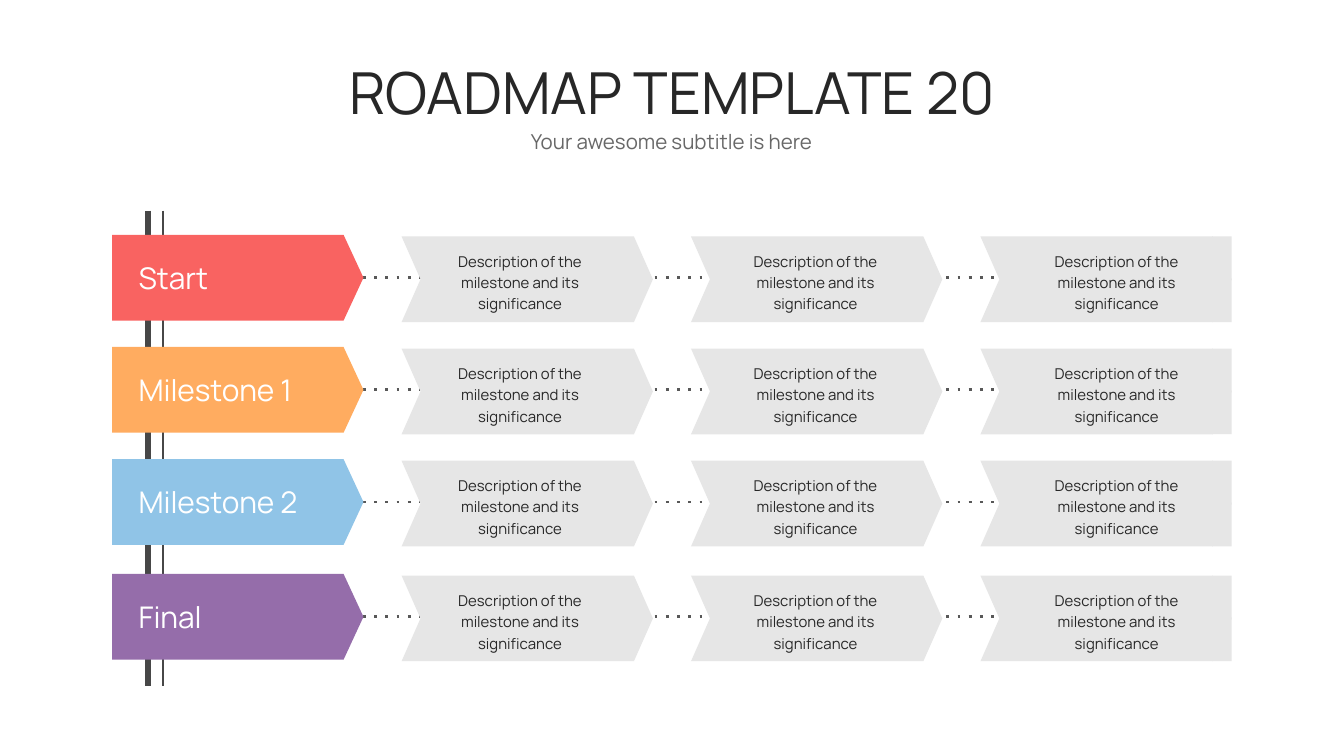
from lxml import etree
from pptx import Presentation
from pptx.dml.color import RGBColor
from pptx.enum.shapes import MSO_CONNECTOR, MSO_SHAPE
from pptx.enum.text import MSO_AUTO_SIZE, PP_ALIGN
from pptx.oxml.ns import qn
from pptx.util import Cm, Pt

FONT = "Manrope"
WHITE = RGBColor(0xFF, 0xFF, 0xFF)
INK = RGBColor(0x27, 0x27, 0x27)
SUBTITLE = RGBColor(0x68, 0x68, 0x68)
RAIL = RGBColor(0x47, 0x47, 0x47)
DOTS = RGBColor(0x58, 0x58, 0x58)
GREY = RGBColor(0xE6, 0xE6, 0xE6)
RED = RGBColor(0xF9, 0x63, 0x61)
ORANGE = RGBColor(0xFF, 0xAC, 0x60)
BLUE = RGBColor(0x90, 0xC4, 0xE7)
PURPLE = RGBColor(0x95, 0x6D, 0xAA)

ARROW_W, ARROW_H = 4.75, 1.62
CHEVRON_X, CHEVRON_STEP = 7.59, 5.47
DESCRIPTION = "Description of the milestone and its significance"
# label, colour, top
MILESTONES = [
    ("Start", RED, 4.44),
    ("Milestone 1", ORANGE, 6.56),
    ("Milestone 2", BLUE, 8.68),
    ("Final", PURPLE, 10.85),
]
# text left, right inset
DESCRIPTION_BOXES = [(8.15, 0.25), (13.61, 0), (19.3, 0)]

prs = Presentation()
prs.slide_width, prs.slide_height = Cm(25.4), Cm(14.29)
s = prs.slides.add_slide(prs.slide_layouts[6])


def add_text(text, x, y, w, h, size, color, align=PP_ALIGN.CENTER, spacing=None, right=0):
    """Add a one-paragraph text box; places and the right inset are in cm."""
    tf = s.shapes.add_textbox(Cm(x), Cm(y), Cm(w), Cm(h)).text_frame
    tf.word_wrap = True
    tf.auto_size = MSO_AUTO_SIZE.SHAPE_TO_FIT_TEXT
    tf.margin_left = tf.margin_top = tf.margin_bottom = 0
    tf.margin_right = Cm(right)
    p = tf.paragraphs[0]
    p.alignment = align
    p.line_spacing = spacing
    r = p.add_run()
    r.text = text
    r.font.name, r.font.size = FONT, Pt(size)
    r.font.color.rgb = color


def add_line(x1, y1, x2, y2, width, color):
    cx = s.shapes.add_connector(MSO_CONNECTOR.STRAIGHT, Cm(x1), Cm(y1), Cm(x2), Cm(y2))
    cx.line.width = Pt(width)
    cx.line.color.rgb = color
    etree.SubElement(cx._element.spPr, qn("a:effectLst"))
    return cx


# Vertical rails and heading
for x, width in [(2.8, 3), (3.08, 1.5)]:
    add_line(x, 3.98, x, 12.96, width, RAIL)
add_text("ROADMAP TEMPLATE 20", 4.69, 1.07, 16.02, 1.32, 31, INK)
add_text("Your awesome subtitle is here", 7.17, 2.44, 11.05, 0.48, 11, SUBTITLE)

# One row for each milestone
for label, color, top in MILESTONES:
    cx = add_line(6.86, top + 0.81, 19.89, top + 0.81, 1.5, DOTS)
    ln = cx._element.spPr.find(qn("a:ln"))
    etree.SubElement(ln, qn("a:prstDash"), val="dot")

    chevron_top = top + 0.03
    parts = [(MSO_SHAPE.PENTAGON, 2.12, top, ARROW_W, 0.232, color)]
    for i in range(3):
        x = CHEVRON_X + i * CHEVRON_STEP
        parts.append((MSO_SHAPE.CHEVRON, x, chevron_top, ARROW_W, 0.221, GREY))
    # Squares off the tip of the last chevron
    parts.append((MSO_SHAPE.RECTANGLE, 22.91, chevron_top, 0.37, None, GREY))

    for kind, x, y, w, adj, fill in parts:
        sp = s.shapes.add_shape(kind, Cm(x), Cm(y), Cm(w), Cm(ARROW_H))
        sp.shadow.inherit = False
        sp.fill.solid()
        sp.fill.fore_color.rgb = fill
        sp.line.fill.background()
        if adj:
            sp.adjustments[0] = adj

    add_text(label, 2.62, top + 0.47, 3.89, 0.69, 16, WHITE, PP_ALIGN.LEFT)
    for x, right in DESCRIPTION_BOXES:
        add_text(DESCRIPTION, x, top + 0.26, 3.61, 1.17, 8, INK, spacing=1.2, right=right)

prs.save("out.pptx")
